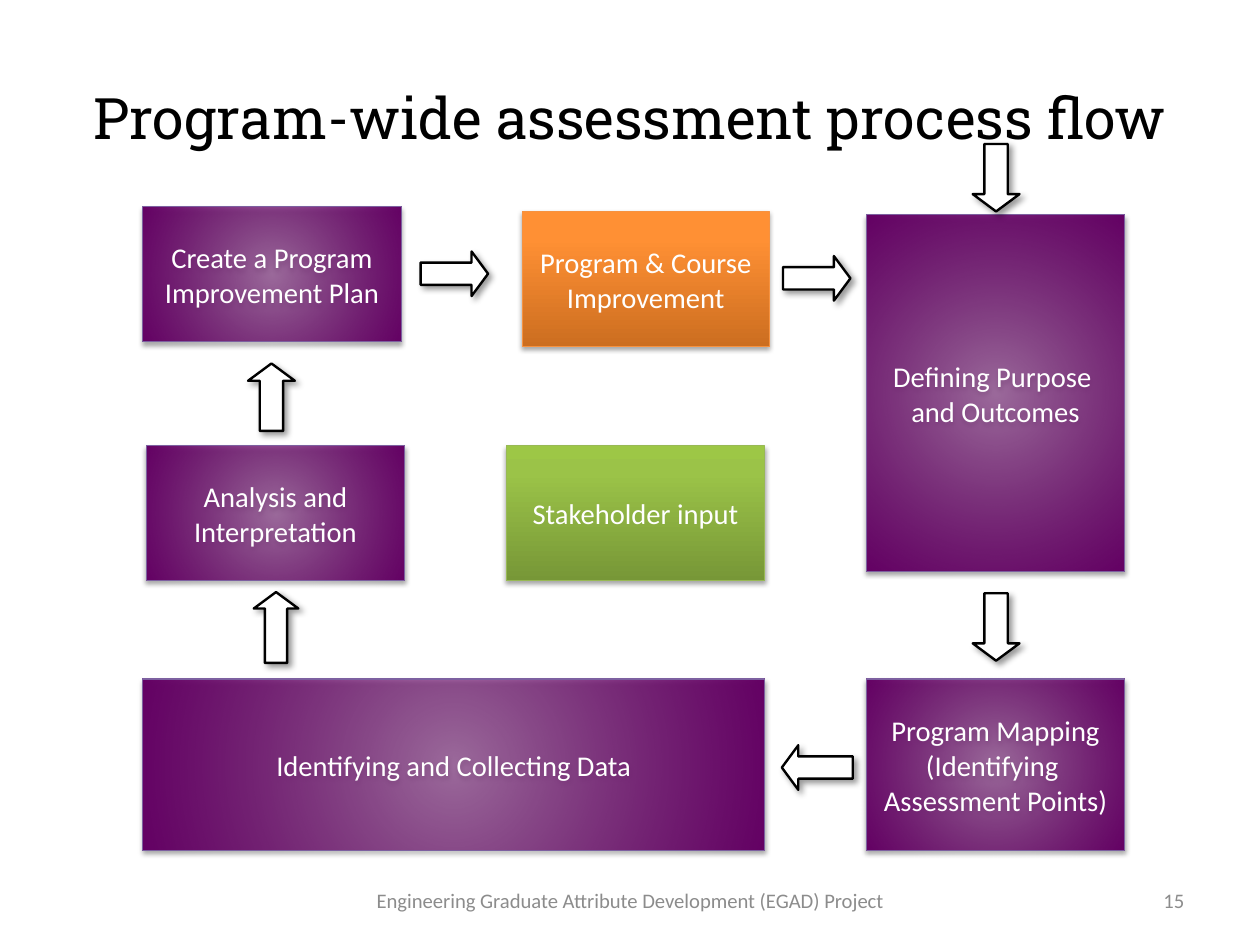
from lxml import etree
from pptx import Presentation
from pptx.dml.color import RGBColor
from pptx.enum.shapes import MSO_SHAPE
from pptx.enum.text import MSO_ANCHOR, PP_ALIGN
from pptx.oxml import parse_xml
from pptx.oxml.ns import nsdecls, qn
from pptx.util import Inches, Pt

BOX = MSO_SHAPE.FLOWCHART_PROCESS
UP, DOWN = MSO_SHAPE.UP_ARROW, MSO_SHAPE.DOWN_ARROW
LEFT, RIGHT = MSO_SHAPE.LEFT_ARROW, MSO_SHAPE.RIGHT_ARROW
MIDDLE = MSO_ANCHOR.MIDDLE
CENTER, ALIGN_RIGHT = PP_ALIGN.CENTER, PP_ALIGN.RIGHT

BLACK = RGBColor(0x00, 0x00, 0x00)
WHITE = RGBColor(0xFF, 0xFF, 0xFF)
GRAY = RGBColor(0x8C, 0x8C, 0x8C)
PURPLE = RGBColor(0x64, 0x00, 0x64)
PURPLE_LINE = RGBColor(0x7D, 0x60, 0xA0)
GREEN_LINE = RGBColor(0x98, 0xB9, 0x55)
ORANGE_LINE = RGBColor(0xF6, 0x92, 0x40)
GREENS = [RGBColor(0x77, 0x97, 0x37), RGBColor(0x9B, 0xC3, 0x48), RGBColor(0x9D, 0xC7, 0x46)]
ORANGES = [RGBColor(0xCC, 0x6E, 0x20), RGBColor(0xFF, 0x90, 0x34), RGBColor(0xFF, 0x91, 0x36)]

# Gradients as (stops of position, colour, opacity in percent) and direction
RADIAL = '<a:path path="circle"><a:fillToRect l="50000" t="50000" r="50000" b="50000"/></a:path>'
UPWARD = '<a:lin ang="16200000" scaled="0"/>'
PURPLE_STYLE = ([(0, PURPLE, 50), (100, PURPLE, 100)], RADIAL, PURPLE_LINE)
GREEN_STYLE = ([(p, c, 100) for p, c in zip((0, 80, 100), GREENS)], UPWARD, GREEN_LINE)
ORANGE_STYLE = ([(p, c, 100) for p, c in zip((0, 80, 100), ORANGES)], UPWARD, ORANGE_LINE)


def write_text(shape, text, size=18, font="Calibri", color=WHITE, align=CENTER,
               wrap=False, margins=(0.1, 0.05), spacing=1.02):
    frame = shape.text_frame
    frame.word_wrap = wrap
    frame.vertical_anchor = MIDDLE
    frame.margin_left = frame.margin_right = Inches(margins[0])
    frame.margin_top = frame.margin_bottom = Inches(margins[1])
    frame.text = text
    for paragraph in frame.paragraphs:
        paragraph.alignment = align
        paragraph.line_spacing = spacing
        paragraph.font.size = Pt(size)
        paragraph.font.name = font
        paragraph.font.color.rgb = color


def add_styled_shape(kind, position, line_color, line_width, shadow):
    shape = slide.shapes.add_shape(kind, *map(Inches, position))
    shape.line.color.rgb = line_color
    shape.line.width = Pt(line_width)
    shape.shadow.inherit = False
    opacity, blur, distance, angle = shadow
    effects = shape._element.spPr.find(qn("a:effectLst"))
    outer = etree.SubElement(effects, qn("a:outerShdw"), blurRad=str(Pt(blur)),
                             dist=str(Pt(distance)), dir=str(angle * 60000), rotWithShape="0")
    color = etree.SubElement(outer, qn("a:srgbClr"), val=str(BLACK))
    etree.SubElement(color, qn("a:alpha"), val=str(opacity * 1000))
    return shape


# Slide of 28 by 21 centimetres
presentation = Presentation()
presentation.slide_width = Inches(28 / 2.54)
presentation.slide_height = Inches(21 / 2.54)
slide = presentation.slides.add_slide(presentation.slide_layouts[6])

# Title, footer and slide number
captions = [
    ("Program-wide assessment process flow", (0.55, 0.33, 9.92, 1.38),
     dict(size=36, font="Roboto Slab", color=BLACK)),
    ("Engineering Graduate Attribute Development (EGAD) Project", (3.07, 7.66, 4.88, 0.44),
     dict(size=13, color=GRAY)),
    ("15", (7.9, 7.66, 2.57, 0.44), dict(size=13, color=GRAY, align=ALIGN_RIGHT)),
]
for text, position, text_format in captions:
    caption = slide.shapes.add_textbox(*map(Inches, position))
    write_text(caption, text, wrap=True, margins=(0.11, 0.06), spacing=1.0, **text_format)

# Process steps
steps = [
    ("Defining Purpose \nand Outcomes", (7.58, 1.88, 2.26, 3.12), PURPLE_STYLE),
    ("Program Mapping\n(Identifying \nAssessment Points)", (7.58, 5.94, 2.26, 1.5), PURPLE_STYLE),
    ("Stakeholder input", (4.43, 3.9, 2.26, 1.18), GREEN_STYLE),
    ("Identifying and Collecting Data", (1.25, 5.94, 5.44, 1.5), PURPLE_STYLE),
    ("Analysis and\nInterpretation", (1.28, 3.9, 2.26, 1.18), PURPLE_STYLE),
    ("Create a Program\nImprovement Plan", (1.25, 1.81, 2.26, 1.18), PURPLE_STYLE),
    ("Program & Course\nImprovement", (4.57, 1.85, 2.16, 1.18), ORANGE_STYLE),
]
for text, position, (stops, direction, line_color) in steps:
    step = add_styled_shape(BOX, position, line_color, 0.75, (35, 3.1, 1.8, 90))
    stop_xml = "".join(
        f'<a:gs pos="{place * 1000}"><a:srgbClr val="{color}">'
        f'<a:alpha val="{opacity * 1000}"/></a:srgbClr></a:gs>'
        for place, color, opacity in stops)
    gradient = parse_xml(f'<a:gradFill {nsdecls("a")} rotWithShape="1">'
                         f'<a:gsLst>{stop_xml}</a:gsLst>{direction}</a:gradFill>')
    step._element.spPr.find(qn("a:prstGeom")).addnext(gradient)
    write_text(step, text)

# Block arrows between the steps
arrows = [
    (DOWN, (8.51, 1.26, 0.41, 0.59)),
    (DOWN, (8.51, 5.19, 0.41, 0.59)),
    (LEFT, (6.84, 6.52, 0.62, 0.39)),
    (UP, (2.22, 5.18, 0.39, 0.62)),
    (UP, (2.17, 3.18, 0.41, 0.59)),
    (RIGHT, (3.68, 2.2, 0.59, 0.39)),
    (RIGHT, (6.85, 2.24, 0.59, 0.39)),
]
for kind, position in arrows:
    arrow = add_styled_shape(kind, position, BLACK, 1.5, (40, 4, 3, 45))
    arrow.fill.solid()
    arrow.fill.fore_color.rgb = WHITE
    arrow.adjustments[0] = 0.5
    arrow.adjustments[1] = 0.37

presentation.save("out.pptx")
